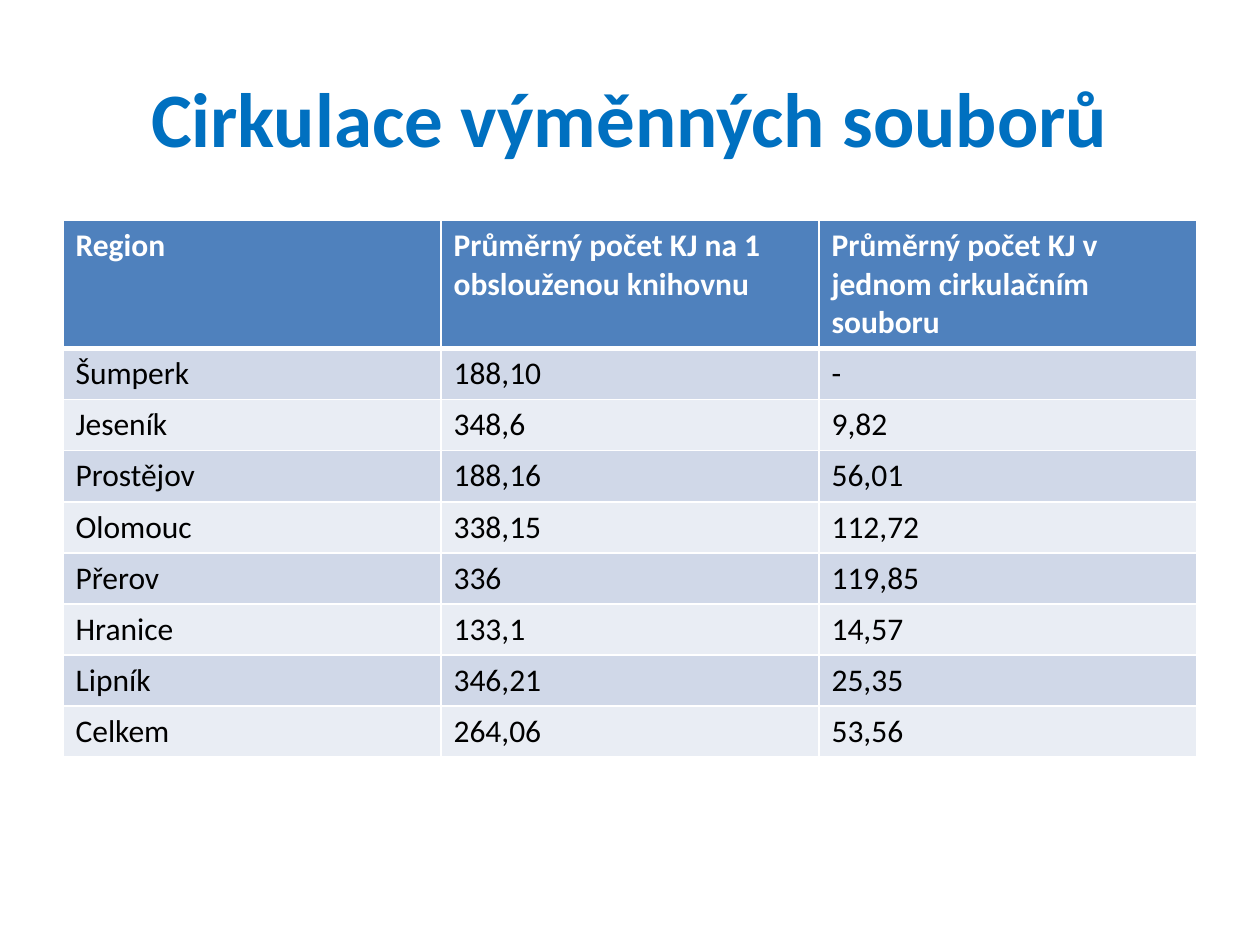
"""Build a slide with a table of exchange collection circulation by region."""
from lxml.etree import SubElement
from pptx import Presentation
from pptx.dml.color import RGBColor
from pptx.enum.text import MSO_ANCHOR, PP_ALIGN
from pptx.oxml.ns import qn
from pptx.util import Pt

COLORS = {
    "title": "0070C0",
    "header": "4F81BD",
    "odd_row": "D0D8E8",
    "even_row": "E9EDF4",
    "white": "FFFFFF",
    "black": "000000",
}
ROWS = [
    ("Region", "Průměrný počet KJ na 1 obslouženou knihovnu",
     "Průměrný počet KJ v jednom cirkulačním souboru"),
    ("Šumperk", "188,10", "-"),
    ("Jeseník", "348,6", "9,82"),
    ("Prostějov", "188,16", "56,01"),
    ("Olomouc", "338,15", "112,72"),
    ("Přerov", "336", "119,85"),
    ("Hranice", "133,1", "14,57"),
    ("Lipník", "346,21", "25,35"),
    ("Celkem", "264,06", "53,56"),
]
LEFT, WIDTH = 36, 648
HEADER_HEIGHT, ROW_HEIGHT = 72, 29.2


def write_text(frame, text, size=18, color="black", bold=False, align=PP_ALIGN.LEFT):
    para = frame.paragraphs[0]
    para.alignment = align
    span = para.add_run()
    span.text = text
    span.font.name = "Calibri"
    span.font.size = Pt(size)
    span.font.bold = bold
    span.font.color.rgb = RGBColor.from_string(COLORS[color])


def set_borders(cell, top=1, bottom=1):
    properties = cell._tc.get_or_add_tcPr()
    for side, width in (("L", 1), ("R", 1), ("T", top), ("B", bottom)):
        line = SubElement(properties, qn(f"a:ln{side}"), w=str(Pt(width)))
        fill = SubElement(line, qn("a:solidFill"))
        SubElement(fill, qn("a:srgbClr"), val=COLORS["white"])


def format_cell(cell, text, row_index):
    is_header = row_index == 0
    set_borders(cell, top=3 if row_index == 1 else 1, bottom=3 if is_header else 1)
    band = "odd_row" if row_index % 2 else "even_row"
    cell.fill.solid()
    cell.fill.fore_color.rgb = RGBColor.from_string(COLORS["header" if is_header else band])
    write_text(cell.text_frame, text, color="white" if is_header else "black", bold=is_header)


def add_title(page, text):
    title = page.shapes.title
    title.left, title.top, title.width, title.height = Pt(LEFT), Pt(21.6), Pt(WIDTH), Pt(90)
    title.text_frame.vertical_anchor = MSO_ANCHOR.MIDDLE
    write_text(title.text_frame, text, size=44, color="title", bold=True, align=PP_ALIGN.CENTER)


def add_region_table(page, rows):
    height = HEADER_HEIGHT + ROW_HEIGHT * (len(rows) - 1)
    table = page.shapes.add_table(
        len(rows), len(rows[0]), Pt(LEFT), Pt(126), Pt(WIDTH), Pt(height)).table
    for row_index, values in enumerate(rows):
        table.rows[row_index].height = Pt(ROW_HEIGHT if row_index else HEADER_HEIGHT)
        for column_index, value in enumerate(values):
            format_cell(table.cell(row_index, column_index), value, row_index)


def main():
    deck = Presentation()
    deck.slide_width, deck.slide_height = Pt(720), Pt(540)
    page = deck.slides.add_slide(deck.slide_layouts[5])
    add_title(page, "Cirkulace výměnných souborů")
    add_region_table(page, ROWS)
    deck.save("out.pptx")


if __name__ == "__main__":
    main()
